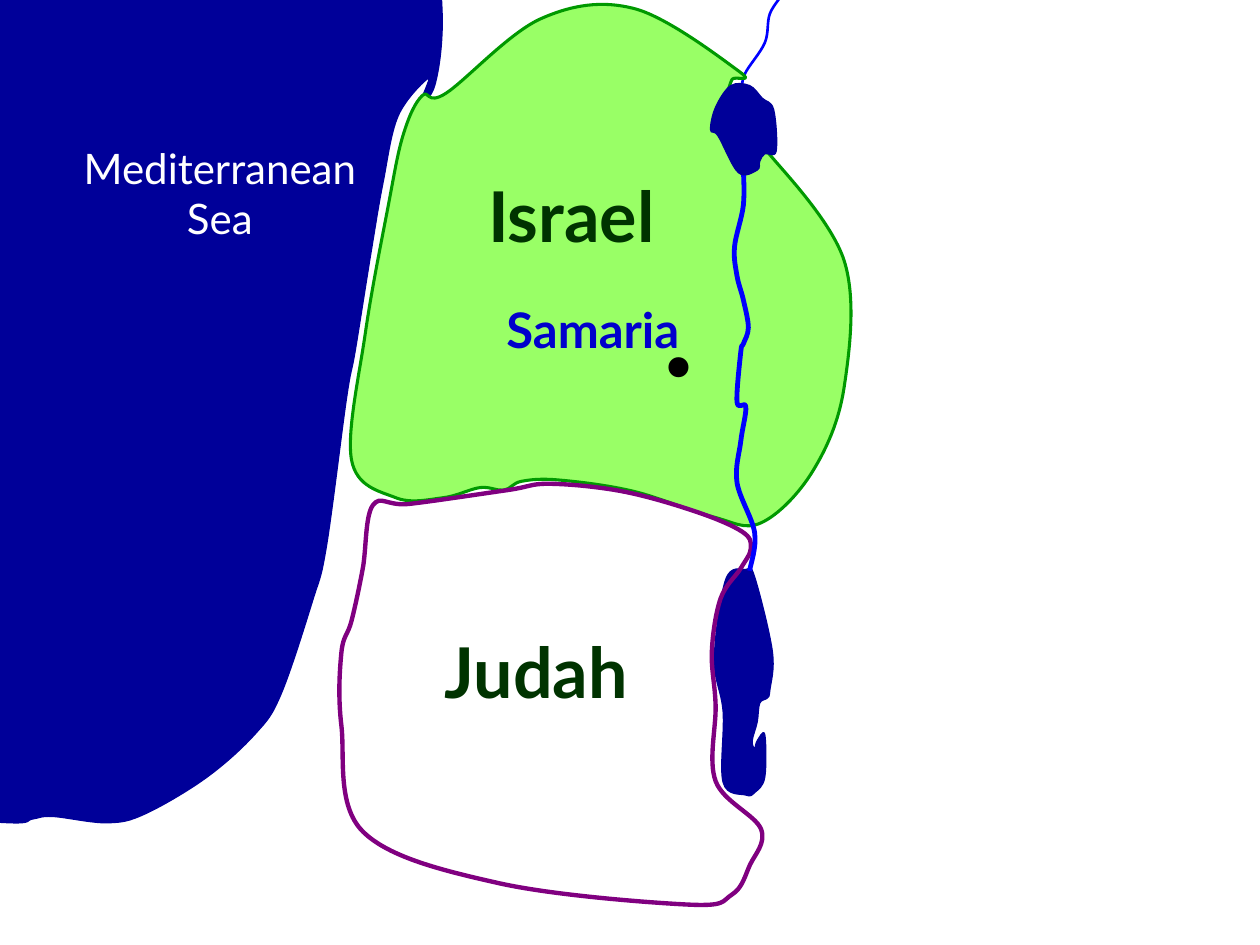
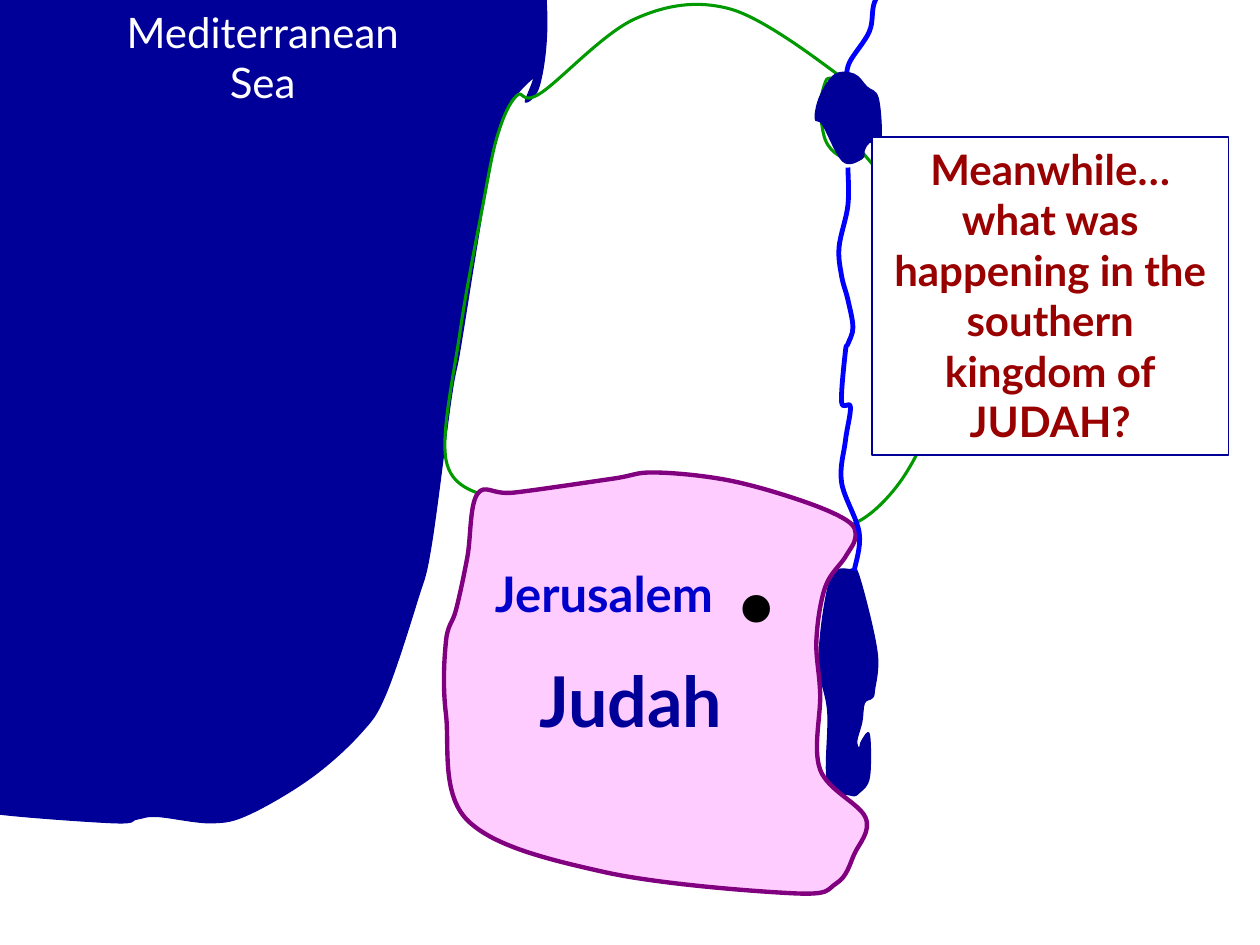
from dataclasses import dataclass
from typing import Optional

from lxml import etree
from pptx import Presentation
from pptx import util as u
from pptx.dml import color
from pptx.enum import shapes, text
from pptx.oxml import ns

NAVY, RIVER_BLUE, CITY_BLUE = "000099", "0000FF", "0000CC"
DARK_GREEN, WHITE, BLACK = "003300", "FFFFFF", "000000"
BODY_FONT, DOT_FONT = "Lato", "Times New Roman"

Point = tuple[float, float]


@dataclass(frozen=True)
class Outline:
    points: list[Point]
    closed: bool


@dataclass(frozen=True)
class Region:
    outline: Outline
    line: str
    width: float
    fill: Optional[str] = None
    shift: Point = (0, 0)


@dataclass(frozen=True)
class Label:
    lines: tuple[str, ...]
    left: float
    top: float
    width: float
    height: float
    size: float
    ink: str
    bold: bool = True
    centred: bool = True
    font: str = BODY_FONT
    fill: Optional[str] = None
    border: Optional[str] = None


@dataclass(frozen=True)
class City:
    labels: tuple[Label, ...]


SEA = Outline([
    (3.61, -1.14), (3.52, -0.79), (3.47, -0.6), (3.51, 0.2), (3.45, 0.68), (3.34, 0.81),
    (3.4, 0.62), (3.16, 0.92), (3.04, 1.45), (2.95, 1.97), (2.82, 2.78), (2.75, 3.16),
    (2.59, 4.34), (2.48, 4.77), (2.23, 5.51), (2.03, 5.82), (1.64, 6.17), (1.15, 6.46),
    (0.85, 6.53), (0.42, 6.48), (0.26, 6.5), (0.08, 6.53), (-0.84, 6.46), (-0.98, 6.39),
    (-1.16, 6.34), (-1.34, 6.15), (-1.5, 5.84), (-1.56, 5.68), (-1.63, 4.87),
    (-1.72, 4.56), (-1.7, 3.96), (-1.63, 3.56), (-1.47, 2.42), (-1.45, 2.23),
    (-1.41, 1.9), (-1.38, 1.28), (-1.36, -0.64), (-0.84, -1.1), (-0.71, -1.14),
    (-0.64, -1.17), (3.09, -1.14), (3.49, -1.12), (3.56, -1.05), (3.63, -1),
], False)

DEAD_SEA = Outline([
    (5.99, 4.58), (5.92, 4.52), (5.76, 4.6), (5.67, 5.23), (5.74, 5.65), (5.74, 6.21),
    (5.92, 6.31), (5.99, 6.29), (6.07, 6.17), (6.07, 5.83), (6.01, 5.88), (5.99, 5.94),
    (5.97, 5.88), (6.01, 5.73), (6.03, 5.58), (6.09, 5.54), (6.11, 5.48), (6.13, 5.17),
], True)

UPPER_JORDAN = Outline([
    (6.53, -0.74), (6.41, -0.55), (6.41, -0.51), (6.2, -0.22), (6.18, -0.16),
    (6.14, -0.09), (6.22, -0.07), (6.11, 0.11), (6.07, 0.34), (5.91, 0.59), (5.89, 0.74),
], False)

JORDAN = Outline([
    (5.9, 1.33), (5.9, 1.63), (5.83, 1.96), (5.85, 2.19), (5.9, 2.38), (5.94, 2.6),
    (5.9, 2.73), (5.88, 2.79), (5.85, 3.19), (5.92, 3.23), (5.88, 3.5), (5.85, 3.83),
    (5.99, 4.23), (5.95, 4.53),
], False)

GALILEE = Outline([
    (5.95, 0.68), (5.8, 0.68), (5.68, 0.85), (5.64, 1.03), (5.7, 1.08), (5.86, 1.37),
    (6.01, 1.35), (6.03, 1.28), (6.07, 1.22), (6.16, 1.2), (6.14, 0.87), (6.05, 0.78),
], True)

ISRAEL = Outline([
    (3.14, 3.95), (2.79, 3.65), (2.9, 2.64), (3.08, 1.64), (3.2, 1.07), (3.35, 0.76),
    (3.54, 0.74), (4.29, 0.15), (5.04, 0.07), (5.87, 0.57), (5.81, 0.63), (5.77, 0.76),
    (5.76, 0.88), (5.8, 1.11), (5.9, 1.23), (6.01, 1.24), (6.12, 1.24), (6.7, 2.07),
    (6.7, 3.07), (6.45, 3.74), (6.04, 4.15), (5.65, 4.1), (5.03, 3.9), (4.44, 3.81),
    (4.14, 3.82), (4, 3.89), (3.81, 3.87), (3.52, 3.95),
], True)

JUDAH = Outline([
    (2.71, 5.18), (2.71, 5.76), (2.88, 6.6), (3.96, 7.01), (5.46, 7.18), (5.81, 7.1),
    (5.95, 6.87), (6.04, 6.58), (5.68, 6.2), (5.68, 5.6), (5.65, 5.17), (5.72, 4.75),
    (5.88, 4.51), (5.96, 4.35), (5.89, 4.22), (5.52, 4.06), (4.94, 3.9), (4.36, 3.84),
    (4.03, 3.89), (3.25, 4), (2.96, 4.01), (2.88, 4.51), (2.79, 4.93),
], True)


def rgb(value: str) -> color.RGBColor:
    return color.RGBColor.from_string(value)


def paint(shape, fill: Optional[str], line: str, width: float) -> None:
    if fill:
        shape.fill.solid()
        shape.fill.fore_color.rgb = rgb(fill)
    else:
        shape.fill.background()
    shape.line.color.rgb = rgb(line)
    shape.line.width = u.Pt(width)


def spline(outline: Outline) -> list[Point]:
    points, count = outline.points, len(outline.points)

    def at(index: int) -> Point:
        if outline.closed:
            return points[index % count]
        return points[max(0, min(index, count - 1))]

    def handle(index: int, sign: int) -> Point:
        before, here, after = at(index - 1), at(index), at(index + 1)
        return (here[0] + sign * (after[0] - before[0]) / 6,
                here[1] + sign * (after[1] - before[1]) / 6)

    curve = [at(0)]
    for index in range(count if outline.closed else count - 1):
        curve += [handle(index, 1), handle(index + 1, -1), at(index + 1)]
    return curve


def draw_region(page, region: Region) -> None:
    dx, dy = region.shift
    start, *rest = [(u.Inches(x + dx), u.Inches(y + dy)) for x, y in spline(region.outline)]
    builder = page.shapes.build_freeform(*start)
    builder.add_line_segments(rest, close=region.outline.closed)
    shape = builder.convert_to_shape()
    segments = list(shape._element.iter(ns.qn("a:lnTo")))
    for first, second, third in zip(*[iter(segments)] * 3):
        curve = etree.Element(ns.qn("a:cubicBezTo"))
        first.addprevious(curve)
        for segment in (first, second, third):
            curve.append(segment[0])
            segment.getparent().remove(segment)
    shape.shadow.inherit = False
    paint(shape, region.fill, region.line, region.width)


def draw_label(page, label: Label):
    place = [u.Inches(n) for n in (label.left, label.top, label.width, label.height)]
    if label.border:
        box = page.shapes.add_shape(shapes.MSO_SHAPE.RECTANGLE, *place)
        box.shadow.inherit = False
        paint(box, label.fill, label.border, 1)
    else:
        box = page.shapes.add_textbox(*place)
    frame = box.text_frame
    frame.word_wrap = True
    frame.auto_size = text.MSO_AUTO_SIZE.SHAPE_TO_FIT_TEXT
    frame.vertical_anchor = text.MSO_ANCHOR.TOP
    for index, line in enumerate(label.lines):
        para = frame.add_paragraph() if index else frame.paragraphs[0]
        para.alignment = text.PP_ALIGN.CENTER if label.centred else text.PP_ALIGN.LEFT
        span = para.add_run()
        span.text = line
        span.font.name = label.font
        span.font.size = u.Pt(label.size)
        span.font.bold = label.bold
        span.font.color.rgb = rgb(label.ink)
    return box


def draw_city(page, city: City) -> None:
    page.shapes.add_group_shape([draw_label(page, label) for label in city.labels])


def water(outline: Outline, shift: Point = (0, 0)) -> Region:
    return Region(outline, NAVY, 0.75, NAVY, shift)


def river(outline: Outline, width: float, shift: Point = (0, 0)) -> Region:
    return Region(outline, RIVER_BLUE, width, None, shift)


def israel(fill: Optional[str] = None, shift: Point = (0, 0)) -> Region:
    return Region(ISRAEL, "009900", 1.75, fill, shift)


def judah(fill: Optional[str] = None, shift: Point = (0, 0)) -> Region:
    return Region(JUDAH, "800080", 2.5, fill, shift)


def kingdom(name: str, left: float, top: float, width: float, ink: str) -> Label:
    return Label((name,), left, top, width, 0.77, 40, ink)


def city_name(name: str, left: float, top: float, centred: bool) -> Label:
    return Label((name,), left, top, 2.25, 0.57, 28, CITY_BLUE, centred=centred)


def city_dot(left: float, top: float, height: float, size: float) -> Label:
    return Label(("•",), left, top, 0.42, height, size, BLACK, False, False, DOT_FONT)


def sea_name(left: float, top: float, height: float) -> Label:
    return Label(("Mediterranean", "Sea"), left, top, 2.83, height, 24, WHITE, False)


EAST, NORTH_EAST = (0.83, 0), (0.83, -0.09)

DIVIDED_KINGDOM = [
    water(SEA),
    water(DEAD_SEA),
    river(UPPER_JORDAN, 1.5),
    israel("99FF66"),
    kingdom("Israel", 3.45, 1.32, 2.17, DARK_GREEN),
    judah(),
    City((city_dot(5.17, 2.42, 0.9, 48), city_name("Samaria", 3.58, 2.33, True))),
    river(JORDAN, 2.75),
    sea_name(0.33, 1.08, 1.5),
    water(GALILEE),
    kingdom("Judah", 3.17, 4.94, 2.17, DARK_GREEN),
]

SOUTHERN_KINGDOM = [
    water(SEA, EAST),
    water(DEAD_SEA, EAST),
    river(UPPER_JORDAN, 2.75, NORTH_EAST),
    israel(shift=(0.75, 0)),
    judah("FFCCFF", NORTH_EAST),
    kingdom("Judah", 3.88, 5.17, 2.25, NAVY),
    City((city_name("Jerusalem", 3.83, 4.42, False), city_dot(5.75, 4.17, 1.2, 66))),
    river(JORDAN, 2.75, EAST),
    sea_name(0.67, 0, 0.9),
    water(GALILEE, NORTH_EAST),
    Label(("Meanwhile…", "what was happening in the southern kingdom of", "JUDAH?"),
          6.92, 1.09, 2.83, 2.52, 24, "990000", fill=WHITE, border=NAVY),
]

DRAWERS = {Region: draw_region, Label: draw_label, City: draw_city}


def main() -> None:
    deck = Presentation()
    deck.slide_width, deck.slide_height = u.Inches(10), u.Inches(7.5)
    for items in (DIVIDED_KINGDOM, SOUTHERN_KINGDOM):
        page = deck.slides.add_slide(deck.slide_layouts[6])
        for item in items:
            DRAWERS[type(item)](page, item)
    deck.save("out.pptx")


if __name__ == "__main__":
    main()
